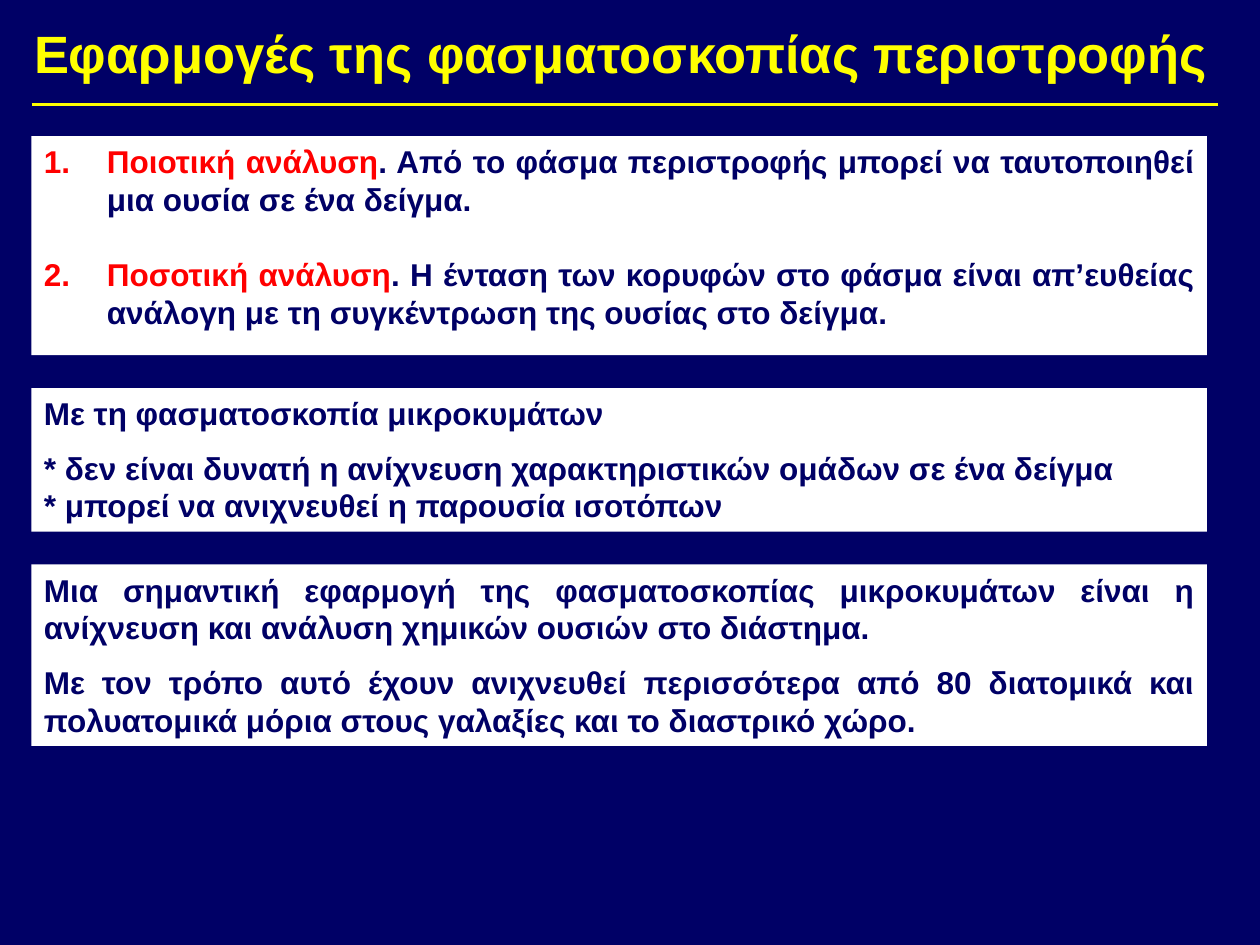
"""Build a slide on the applications of rotational spectroscopy."""
from dataclasses import dataclass

import pptx
import pptx.dml.color
import pptx.enum.shapes
import pptx.enum.text
import pptx.oxml.ns
import pptx.util
from lxml import etree

Inches = pptx.util.Inches
Pt = pptx.util.Pt
PP_ALIGN = pptx.enum.text.PP_ALIGN


@dataclass(frozen=True)
class Theme:
    font: str = "Arial"
    navy: str = "000066"
    white: str = "FFFFFF"
    yellow: str = "FFFF00"
    red: str = "FF0000"
    title_size: int = 30
    body_size: int = 18
    item_gap: float = 21.5
    small_gap: float = 9.5
    left: float = 0.25
    panel_width: float = 9.33


THEME = Theme()


def rgb(value):
    return pptx.dml.color.RGBColor.from_string(value)


def add_text(p, text, color=THEME.navy, size=THEME.body_size, bold=True):
    r = p.add_run()
    r.text = text
    r.font.name = THEME.font
    r.font.size = Pt(size)
    r.font.bold = bold
    r.font.color.rgb = rgb(color)


def add_number(p, color):
    pPr = p._p.get_or_add_pPr()
    pPr.set("marL", str(Inches(0.5)))
    pPr.set("indent", str(-Inches(0.5)))
    qn = pptx.oxml.ns.qn
    clr = etree.SubElement(pPr, qn("a:buClr"))
    etree.SubElement(clr, qn("a:srgbClr"), val=color)
    etree.SubElement(pPr, qn("a:buAutoNum"), type="arabicPeriod")


def set_title(slide, text):
    sp = slide.shapes.title
    sp.left, sp.top = Inches(0.17), Inches(0.12)
    sp.width, sp.height = Inches(9.58), Inches(0.6)
    tf = sp.text_frame
    tf.auto_size = pptx.enum.text.MSO_AUTO_SIZE.NONE
    tf.vertical_anchor = pptx.enum.text.MSO_ANCHOR.TOP
    p = tf.paragraphs[0]
    p.alignment = PP_ALIGN.LEFT
    add_text(p, text, color=THEME.yellow, size=THEME.title_size)


def add_rule(slide, y, right):
    line = slide.shapes.add_connector(
        pptx.enum.shapes.MSO_CONNECTOR.STRAIGHT,
        Inches(THEME.left), Inches(y), Inches(right), Inches(y))
    line.line.color.rgb = rgb(THEME.yellow)
    line.line.width = Pt(2)
    etree.SubElement(line._element.spPr, pptx.oxml.ns.qn("a:effectLst"))


def add_panel(slide, top, height, paragraphs, numbered=False):
    """Draw a white panel of (space before, lead, text) paragraphs."""
    sp = slide.shapes.add_shape(
        pptx.enum.shapes.MSO_SHAPE.RECTANGLE, Inches(THEME.left),
        Inches(top), Inches(THEME.panel_width), Inches(height))
    sp.shadow.inherit = False
    sp.fill.solid()
    sp.fill.fore_color.rgb = rgb(THEME.white)
    sp.line.fill.background()
    tf = sp.text_frame
    tf.word_wrap = True
    tf.vertical_anchor = pptx.enum.text.MSO_ANCHOR.TOP
    for i, (gap, lead, text) in enumerate(paragraphs):
        p = tf.add_paragraph() if i else tf.paragraphs[0]
        p.alignment = PP_ALIGN.JUSTIFY
        if gap:
            p.space_before = Pt(gap)
        if numbered:
            add_number(p, THEME.red)
        if lead:
            add_text(p, lead, color=THEME.red)
        add_text(p, text)


def main():
    prs = pptx.Presentation()
    prs.slide_width, prs.slide_height = Inches(10), Inches(7.5)
    slide = prs.slides.add_slide(prs.slide_layouts.get_by_name("Title Only"))
    slide.background.fill.solid()
    slide.background.fill.fore_color.rgb = rgb(THEME.navy)

    set_title(slide, "Εφαρμογές της φασματοσκοπίας περιστροφής")
    add_rule(slide, 0.83, 9.67)
    add_panel(slide, 1.08, 1.74, [
        (0, "Ποιοτική ανάλυση",
         ". Από το φάσμα περιστροφής μπορεί να ταυτοποιηθεί μια ουσία "
         "σε ένα δείγμα."),
        (THEME.item_gap, "Ποσοτική ανάλυση",
         ". Η ένταση των κορυφών στο φάσμα είναι απ’ευθείας ανάλογη με τη "
         "συγκέντρωση της ουσίας στο δείγμα."),
    ], numbered=True)
    add_panel(slide, 3.08, 1.14, [
        (0, "", "Με τη φασματοσκοπία μικροκυμάτων"),
        (THEME.small_gap, "",
         "* δεν είναι δυνατή η ανίχνευση χαρακτηριστικών ομάδων σε ένα δείγμα"),
        (0, "", "* μπορεί να ανιχνευθεί η παρουσία ισοτόπων"),
    ])
    add_panel(slide, 4.48, 1.44, [
        (0, "",
         "Μια σημαντική εφαρμογή της φασματοσκοπίας μικροκυμάτων είναι η "
         "ανίχνευση και ανάλυση χημικών ουσιών στο διάστημα."),
        (THEME.small_gap, "",
         "Με τον τρόπο αυτό έχουν ανιχνευθεί περισσότερα από 80 διατομικά και "
         "πολυατομικά μόρια στους γαλαξίες και το διαστρικό χώρο."),
    ])
    prs.save("out.pptx")


if __name__ == "__main__":
    main()
